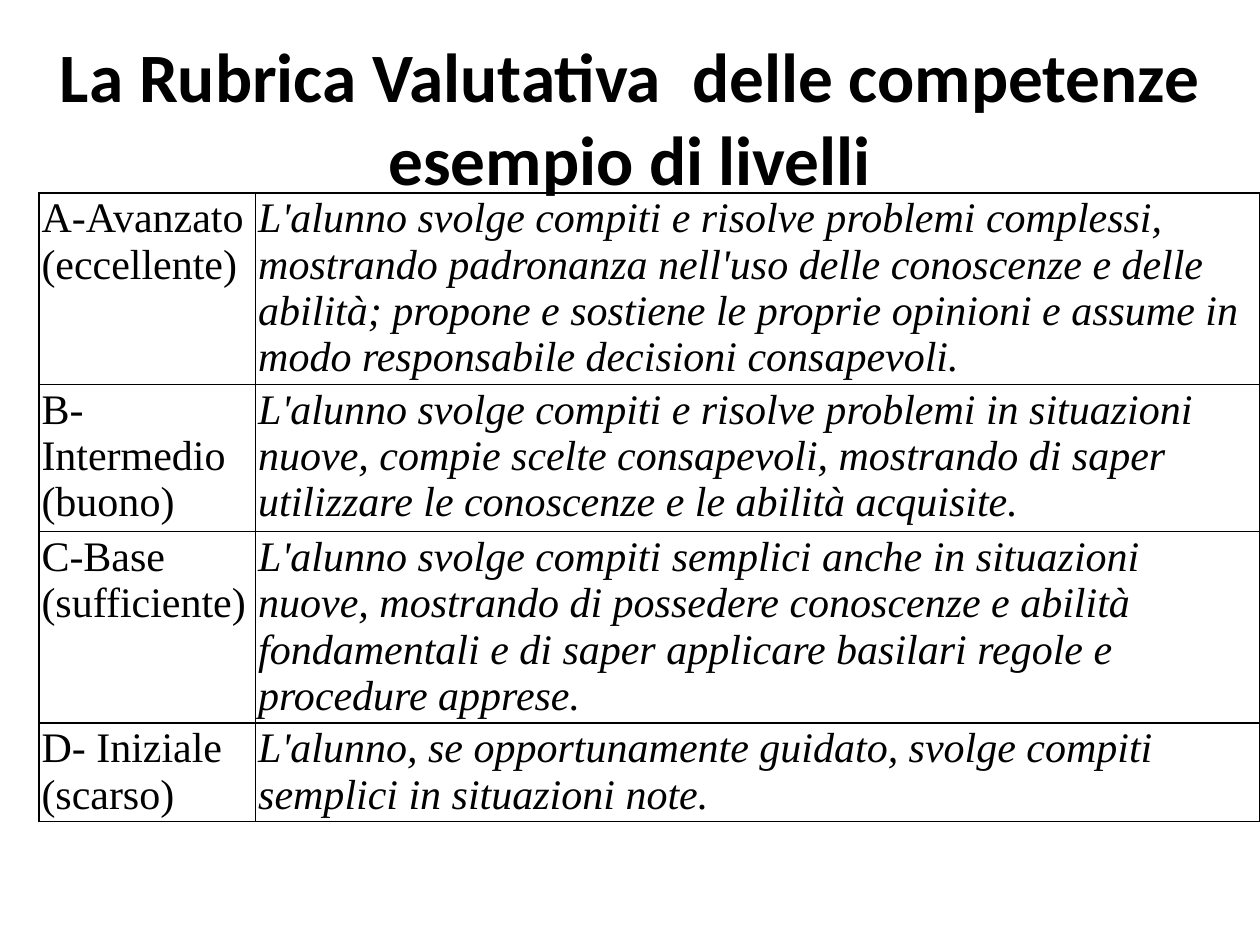
from lxml.etree import SubElement
from pptx import Presentation
from pptx.dml.color import RGBColor
from pptx.enum.text import MSO_ANCHOR, MSO_AUTO_SIZE, PP_ALIGN
from pptx.oxml.ns import qn
from pptx.util import Inches, Pt

# Content
TITLE = "La Rubrica Valutativa  delle competenze\vesempio di livelli"
LEVELS = [  # (level paragraphs, description)
    (["A-Avanzato (eccellente)"],
     "L'alunno svolge compiti e risolve problemi complessi, mostrando padronanza "
     "nell'uso delle conoscenze e delle abilità; propone e sostiene le proprie "
     "opinioni e assume in modo responsabile decisioni consapevoli."),
    (["B-Intermedio", "(buono)"],
     "L'alunno svolge compiti e risolve problemi in situazioni nuove, compie scelte "
     "consapevoli, mostrando di saper utilizzare le conoscenze e le abilità acquisite."),
    (["C-Base", "(sufficiente)"],
     "L'alunno svolge compiti semplici anche in situazioni nuove, mostrando di "
     "possedere conoscenze e abilità fondamentali e di saper applicare basilari "
     "regole e procedure apprese."),
    (["D- Iniziale", "(scarso)"],
     "L'alunno, se opportunamente guidato, svolge compiti semplici in situazioni note."),
]

# Layout, in inches
SLIDE_W, SLIDE_H = 10, 7.5
TITLE_TOP, TITLE_H = 0.3, 1.25
TABLE_LEFT, TABLE_TOP = 0.31, 1.53
LEVEL_W = 1.72
COLS = [LEVEL_W, SLIDE_W - TABLE_LEFT - LEVEL_W]
ROWS = [1.52, 1.17, 1.52, 0.78]
INSET = 0.02

BLACK = RGBColor(0, 0, 0)


def write(tf, paragraphs, font, size, bold=False, italic=False, align=PP_ALIGN.LEFT):
    for i, text in enumerate(paragraphs):
        p = tf.paragraphs[0] if i == 0 else tf.add_paragraph()
        p.text = text
        p.alignment = align
        for r in p.runs:
            r.font.name, r.font.size = font, Pt(size)
            r.font.bold, r.font.italic = bold, italic
            r.font.color.rgb = BLACK


def add_borders(cell, width=1):
    tc_pr = cell._tc.get_or_add_tcPr()
    for i, side in enumerate(("a:lnL", "a:lnR", "a:lnT", "a:lnB")):
        ln = tc_pr.makeelement(qn(side), {"w": str(Pt(width))})
        fill = SubElement(ln, qn("a:solidFill"))
        SubElement(fill, qn("a:srgbClr"), val=str(BLACK))
        tc_pr.insert(i, ln)  # borders come before the fill


def main():
    prs = Presentation()
    prs.slide_width, prs.slide_height = Inches(SLIDE_W), Inches(SLIDE_H)
    s = prs.slides.add_slide(prs.slide_layouts[5])

    # Title
    title = s.shapes.title
    title.left, title.top = 0, Inches(TITLE_TOP)
    title.width, title.height = Inches(SLIDE_W), Inches(TITLE_H)
    tf = title.text_frame
    tf.word_wrap, tf.auto_size = True, MSO_AUTO_SIZE.NONE
    tf.vertical_anchor = MSO_ANCHOR.MIDDLE
    write(tf, [TITLE], "Calibri", 39.6, bold=True, align=PP_ALIGN.CENTER)

    # Table of levels
    table = s.shapes.add_table(
        len(ROWS), len(COLS), Inches(TABLE_LEFT), Inches(TABLE_TOP),
        Inches(sum(COLS)), Inches(sum(ROWS))).table
    table.first_row = table.horz_banding = False
    for col, width in zip(table.columns, COLS):
        col.width = Inches(width)
    for row, height, (level, description) in zip(table.rows, ROWS, LEVELS):
        row.height = Inches(height)
        for cell, paragraphs, italic in zip(row.cells, (level, [description]), (False, True)):
            cell.fill.background()
            cell.margin_left = cell.margin_right = Inches(INSET)
            cell.margin_top = cell.margin_bottom = Inches(INSET)
            add_borders(cell)
            write(cell.text_frame, paragraphs, "Times New Roman", 24, italic=italic)

    prs.save("out.pptx")


if __name__ == "__main__":
    main()
